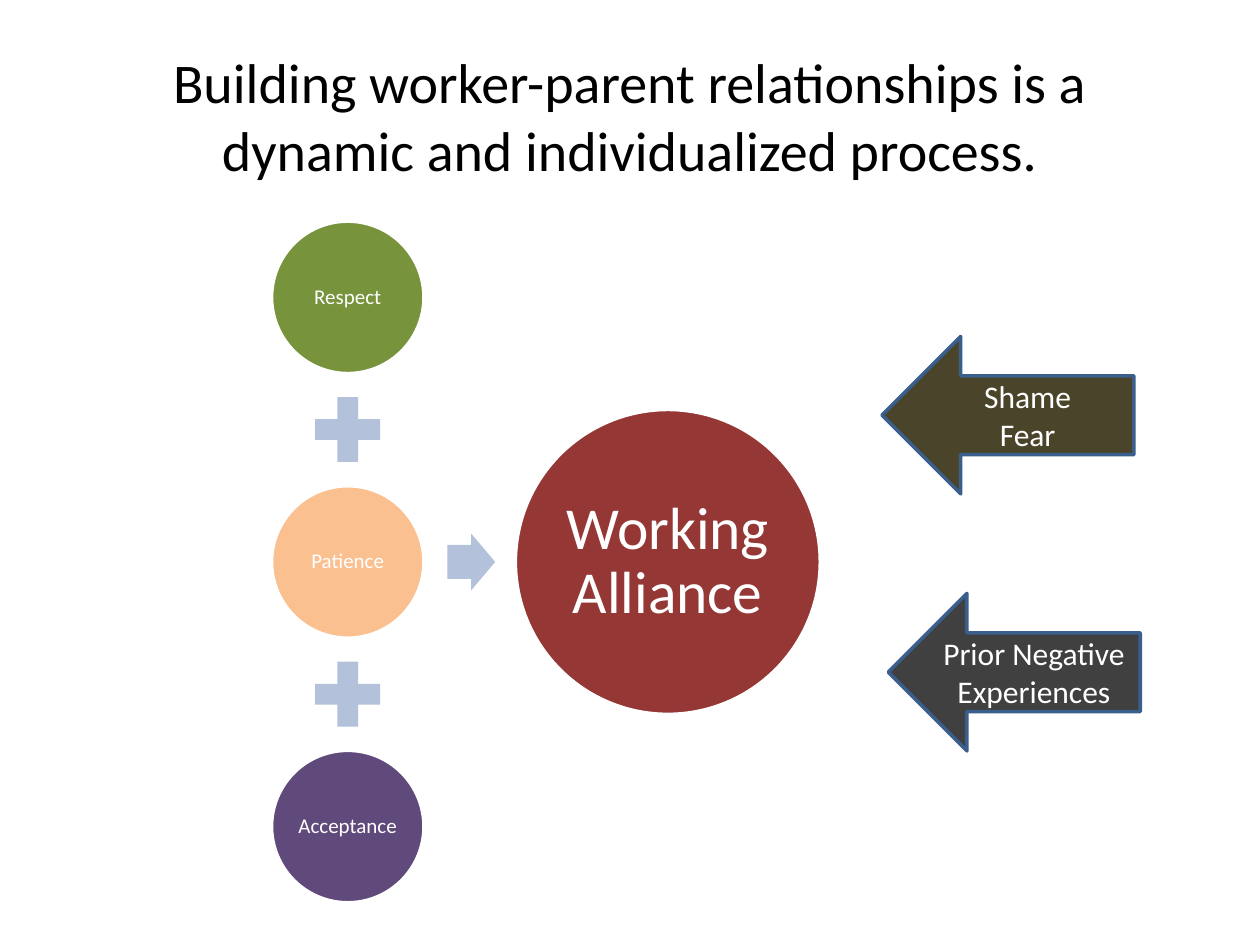
from pptx import Presentation
from pptx.dml.color import RGBColor
from pptx.enum.shapes import MSO_SHAPE
from pptx.enum.text import MSO_ANCHOR, MSO_AUTO_SIZE, PP_ALIGN
from pptx.util import Inches, Pt

OVAL = MSO_SHAPE.OVAL
PLUS = MSO_SHAPE.MATH_PLUS
RIGHT = MSO_SHAPE.RIGHT_ARROW
LEFT = MSO_SHAPE.LEFT_ARROW
TOP, MIDDLE = MSO_ANCHOR.TOP, MSO_ANCHOR.MIDDLE
CENTER = PP_ALIGN.CENTER
FIXED = MSO_AUTO_SIZE.NONE

TITLE = "Building worker-parent relationships is a dynamic and individualized process."
PARTS = [("Respect", "77933C"), ("Patience", "FAC090"), ("Acceptance", "604A7B")]
GOAL = ("Working Alliance", "953735")
FORCES = [
    (["Prior Negative Experiences"], "404040", 7.05, 4.71),
    (["Shame", "Fear"], "4A452A", 7, 2.67),
]
WHITE, BLACK, PALE, EDGE = "FFFFFF", "000000", "B3C1DB", "3A5F8C"

MID_X, FIRST_Y, STEP = 2.76, 2.36, 2.1
MID_Y = FIRST_Y + STEP
DOT, SIGN, BIG = 1.21, 0.7, 2.42


def color(code):
    return RGBColor.from_string(code)


def place(shape, x, y, w, h):
    shape.left, shape.top = Inches(x), Inches(y)
    shape.width, shape.height = Inches(w), Inches(h)


def write(shape, lines, size=18, ink=WHITE, anchor=MIDDLE, inset=None, lead=None):
    frame = shape.text_frame
    frame.word_wrap = True
    frame.auto_size = FIXED
    frame.vertical_anchor = anchor
    if inset is not None:
        frame.margin_left = frame.margin_right = Inches(inset)
        frame.margin_top = frame.margin_bottom = Inches(inset)
    frame.text = "\n".join(lines)
    for para in frame.paragraphs:
        para.alignment = CENTER
        if lead:
            para.line_spacing = lead
        para.font.name = "Calibri"
        para.font.size = Pt(size)
        para.font.color.rgb = color(ink)


def draw(kind, x, y, w, h, fill, edge=None):
    shape = slide.shapes.add_shape(kind, Inches(x), Inches(y), Inches(w), Inches(h))
    shape.shadow.inherit = False
    shape.fill.solid()
    shape.fill.fore_color.rgb = color(fill)
    if edge:
        shape.line.color.rgb = color(edge)
        shape.line.width = Pt(2)
    else:
        shape.line.fill.background()
    return shape


def center(kind, x, y, w, h, fill, edge=None):
    return draw(kind, x - w / 2, y - h / 2, w, h, fill, edge)


deck = Presentation()
deck.slide_width, deck.slide_height = Inches(10), Inches(7.5)
slide = deck.slides.add_slide(deck.slide_layouts[5])

title = slide.shapes.title
place(title, 0.5, 0.33, 9, 6.37)
write(title, [TITLE], size=32, ink=BLACK, anchor=TOP)

for i, (name, fill) in enumerate(PARTS):
    y = FIRST_Y + i * STEP
    if i:
        center(PLUS, MID_X, y - STEP / 2, SIGN, SIGN, PALE)
    dot = center(OVAL, MID_X, y, DOT, DOT, fill, WHITE)
    write(dot, [name], size=12, inset=0.02, lead=0.9)

arrow = center(RIGHT, 3.74, MID_Y, 0.38, 0.45, PALE)
arrow.adjustments[0] = 0.6
arrow.adjustments[1] = 0.5

name, fill = GOAL
goal = center(OVAL, 5.3, MID_Y, BIG, BIG, fill, WHITE)
write(goal, [name], size=34, inset=0.05, lead=0.9)

for lines, fill, x, y in FORCES:
    write(draw(LEFT, x, y, 2, 1.25, fill, EDGE), lines)

deck.save("out.pptx")
